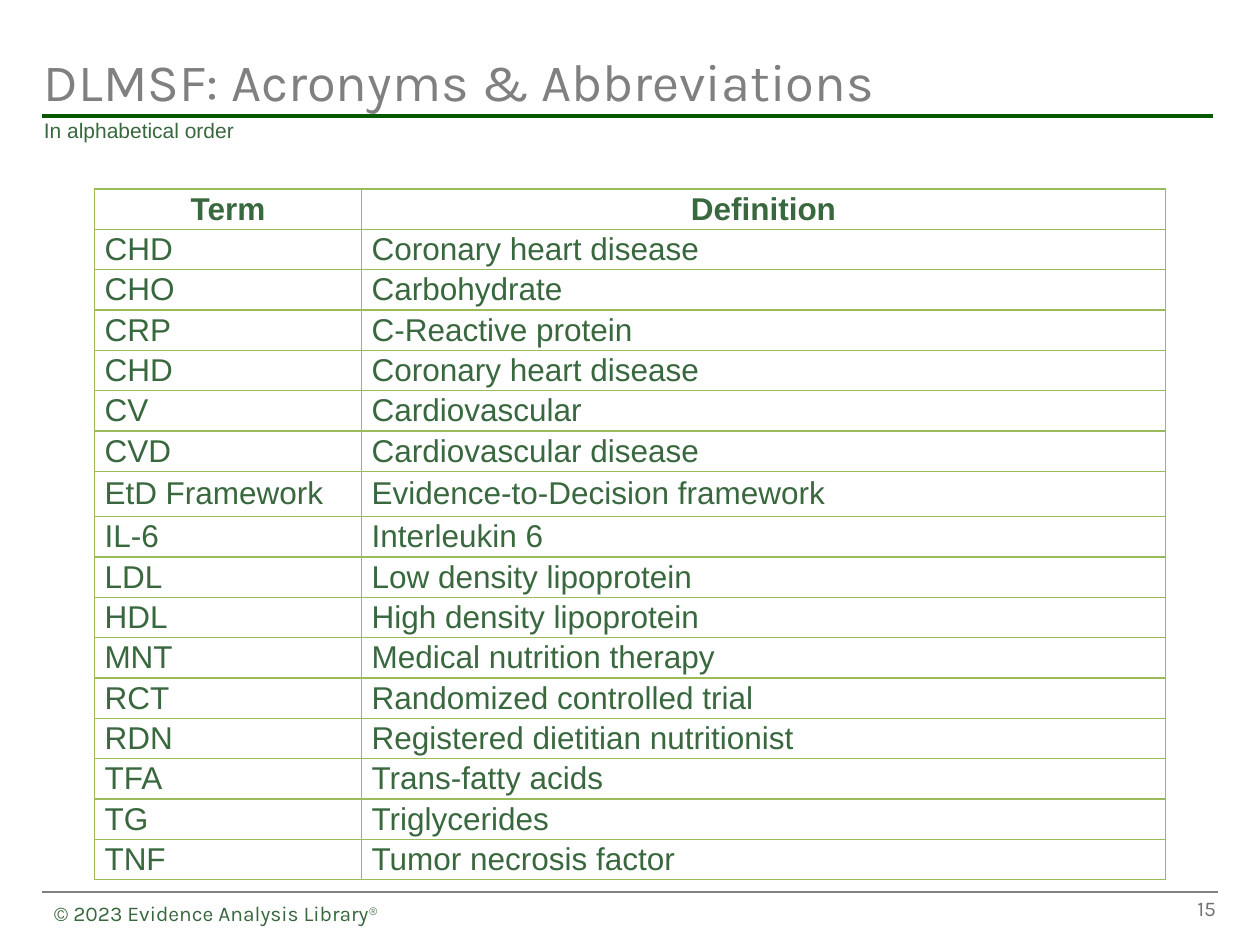
"""Build the acronyms and abbreviations slide."""
from dataclasses import dataclass

from lxml import etree
from pptx import Presentation
from pptx.dml.color import RGBColor
from pptx.enum import shapes, text
from pptx.oxml import ns
from pptx.util import Inches, Pt

TITLE = "DLMSF: Acronyms & Abbreviations"
SUBTITLE = "In alphabetical order"
COPYRIGHT = ("© 2023 Evidence Analysis Library", "®")
PAGE_NUMBER = "15"
HEADER = ("Term", "Definition")
TERMS = [
    ("CHD", "Coronary heart disease"),
    ("CHO", "Carbohydrate"),
    ("CRP", "C-Reactive protein"),
    ("CHD", "Coronary heart disease"),
    ("CV", "Cardiovascular"),
    ("CVD", "Cardiovascular disease"),
    ("EtD Framework", "Evidence-to-Decision framework"),
    ("IL-6", "Interleukin 6"),
    ("LDL", "Low density lipoprotein"),
    ("HDL", "High density lipoprotein"),
    ("MNT", "Medical nutrition therapy"),
    ("RCT", "Randomized controlled trial"),
    ("RDN", "Registered dietitian nutritionist"),
    ("TFA", "Trans-fatty acids"),
    ("TG", "Triglycerides"),
    ("TNF", "Tumor necrosis factor"),
]
TALL_TERM = "EtD Framework"
TABLE_LEFT, TABLE_TOP, TABLE_HEIGHT = 0.75, 1.5, 5.25
COLUMN_WIDTHS = (2.12, 6.38)
TALL_ROW = 0.36


@dataclass(frozen=True)
class Theme:
    """Colours, fonts and type sizes."""
    green: str = "39683E"
    rule: str = "065901"
    grey: str = "808080"
    number: str = "717171"
    border: str = "9BBB59"
    heading: str = "Karla"
    body: str = "Arial"
    title_size: int = 30
    table_size: int = 18
    small_size: int = 12


THEME = Theme()


def add_span(para, words, font, size, color, bold=False):
    """Add one formatted run and return it."""
    span = para.add_run()
    span.text = words
    span.font.name, span.font.size, span.font.bold = font, Pt(size), bold
    span.font.color.rgb = RGBColor.from_string(color)
    return span


def add_box(page, frame, anchor=text.MSO_ANCHOR.TOP, wrap=True):
    """Add a text box and return its first paragraph."""
    box = page.shapes.add_textbox(*map(Inches, frame))
    box.text_frame.word_wrap = wrap
    box.text_frame.vertical_anchor = anchor
    return box.text_frame.paragraphs[0]


def add_rule(page, right, height, color, weight):
    """Draw a horizontal rule from the left margin."""
    rule = page.shapes.add_connector(
        shapes.MSO_CONNECTOR.STRAIGHT,
        Inches(0.33), Inches(height), Inches(right), Inches(height))
    rule.line.color.rgb = RGBColor.from_string(color)
    rule.line.width = Pt(weight)
    etree.SubElement(rule._element.spPr, ns.qn("a:effectLst"))


def add_borders(cell):
    """Outline all four sides of a cell."""
    properties = cell._tc.get_or_add_tcPr()
    for index, side in enumerate(("lnL", "lnR", "lnT", "lnB")):
        line = etree.Element(ns.qn(f"a:{side}"), w=str(Pt(1)))
        fill = etree.SubElement(line, ns.qn("a:solidFill"))
        etree.SubElement(fill, ns.qn("a:srgbClr"), val=THEME.border)
        properties.insert(index, line)


def fill_cell(cell, words, is_header):
    """Write and style one table cell."""
    cell.margin_left = Inches(0.01 if is_header else 0.08)
    cell.margin_right = cell.margin_top = cell.margin_bottom = Inches(0.01)
    cell.vertical_anchor = text.MSO_ANCHOR.MIDDLE
    cell.fill.background()
    add_borders(cell)
    para = cell.text_frame.paragraphs[0]
    para.alignment = text.PP_ALIGN.CENTER if is_header else text.PP_ALIGN.LEFT
    add_span(para, words, THEME.body, THEME.table_size, THEME.green, is_header)


def add_terms(page):
    """Add the table of terms and definitions."""
    rows = [HEADER, *TERMS]
    row_height = (TABLE_HEIGHT - TALL_ROW) / (len(rows) - 1)
    table = page.shapes.add_table(
        len(rows), len(HEADER), Inches(TABLE_LEFT), Inches(TABLE_TOP),
        Inches(sum(COLUMN_WIDTHS)), Inches(TABLE_HEIGHT)).table
    table.horz_banding = table.first_row = False
    for column, width in zip(table.columns, COLUMN_WIDTHS):
        column.width = Inches(width)
    for index, (row, entry) in enumerate(zip(table.rows, rows)):
        row.height = Inches(TALL_ROW if entry[0] == TALL_TERM else row_height)
        for cell, words in zip(row.cells, entry):
            fill_cell(cell, words, index == 0)


def main():
    """Assemble and save the deck."""
    deck = Presentation()
    deck.slide_width, deck.slide_height = Inches(10), Inches(7.5)
    page = deck.slides.add_slide(deck.slide_layouts[6])
    add_rule(page, 9.67, 7.08, THEME.grey, 1)
    add_rule(page, 9.63, 0.92, THEME.rule, 2.25)

    middle = text.MSO_ANCHOR.MIDDLE
    title = add_box(page, (0.25, 0.33, 9, 0.62), middle)
    add_span(title, TITLE, THEME.heading, THEME.title_size, THEME.grey)
    number = add_box(page, (7.42, 7.08, 2.33, 0.25), middle)
    number.alignment = text.PP_ALIGN.RIGHT
    add_span(number, PAGE_NUMBER, THEME.heading, THEME.small_size, THEME.number)

    add_terms(page)
    subtitle = add_box(page, (0.25, 0.88, 1.72, 0.3), wrap=False)
    add_span(subtitle, SUBTITLE, THEME.body, THEME.small_size, THEME.green)
    footer = add_box(page, (0.33, 7.1, 2.84, 0.3), wrap=False)
    for words in COPYRIGHT:
        span = add_span(footer, words, THEME.heading, THEME.small_size, THEME.green)
    span.font._element.set("baseline", "30000")
    deck.save("out.pptx")


if __name__ == "__main__":
    main()
